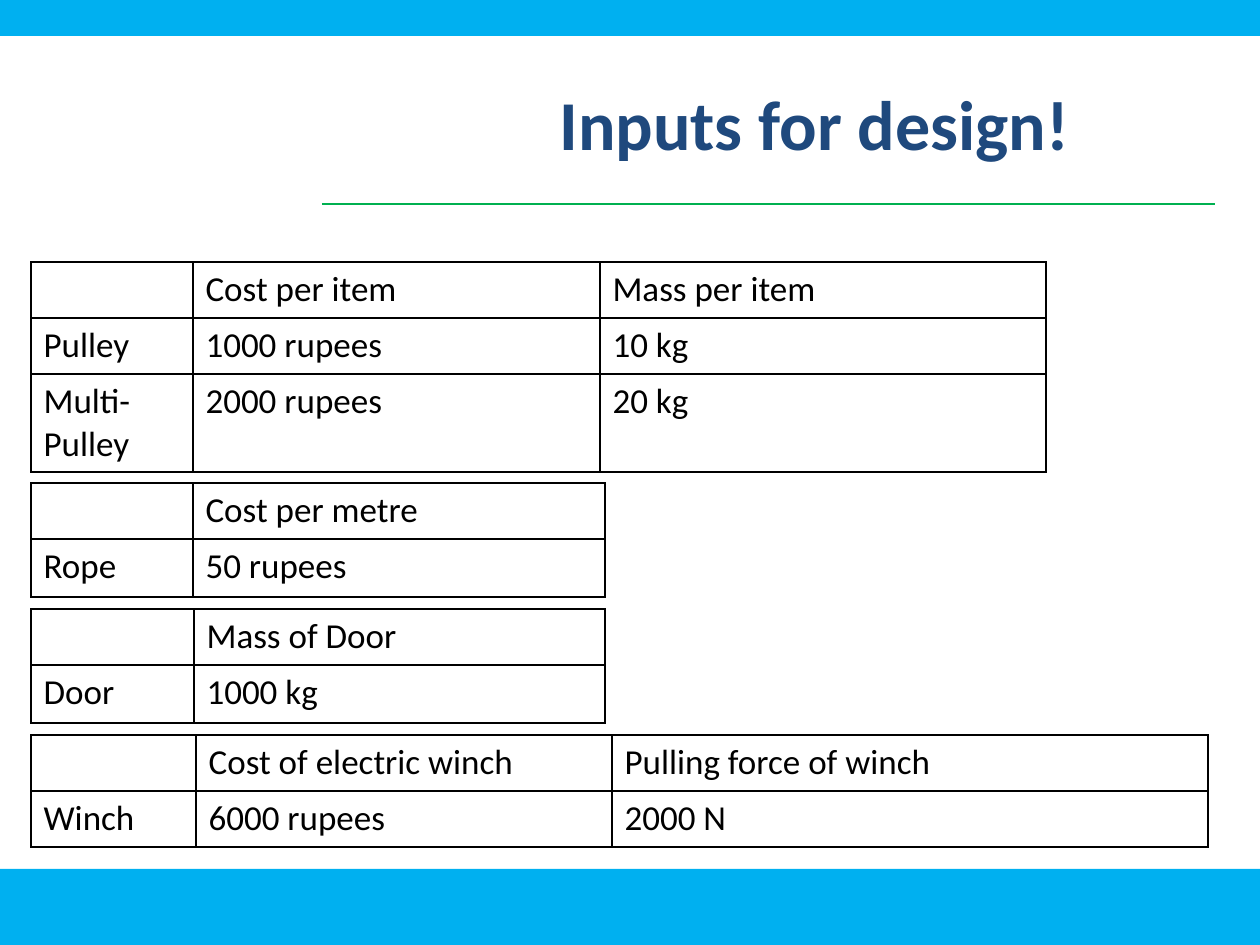
from dataclasses import dataclass

from lxml import etree
from pptx import Presentation
from pptx.dml.color import RGBColor
from pptx.enum.shapes import MSO_CONNECTOR, MSO_SHAPE
from pptx.enum.text import MSO_ANCHOR, PP_ALIGN
from pptx.oxml.ns import qn
from pptx.util import Emu, Pt

RECT = MSO_SHAPE.RECTANGLE
STRAIGHT = MSO_CONNECTOR.STRAIGHT
MIDDLE = MSO_ANCHOR.MIDDLE
CENTER = PP_ALIGN.CENTER

PX_PER_INCH = 126
WIDTH, HEIGHT = 1260, 945


@dataclass(frozen=True)
class Theme:
    font: str = "Calibri"
    title_size: int = 40
    body_size: int = 20
    rule_width: float = 0.75
    border_width: int = 1
    band: str = "00B0F0"
    rule: str = "00B050"
    title: str = "1F497D"
    text: str = "000000"


@dataclass(frozen=True)
class DataTable:
    top: int
    columns: list[int]
    row_heights: list[int]
    rows: list[list[str]]


THEME = Theme()
TABLE_LEFT = 31
TABLES = [
    DataTable(262, [162, 407, 446], [56, 56, 98], [
        ["", "Cost per item", "Mass per item"],
        ["Pulley", "1000 rupees", "10 kg"],
        ["Multi-Pulley", "2000 rupees", "20 kg"],
    ]),
    DataTable(483, [162, 412], [56, 58], [
        ["", "Cost per metre"],
        ["Rope", "50 rupees"],
    ]),
    DataTable(609, [163, 411], [56, 58], [
        ["", "Mass of Door"],
        ["Door", "1000 kg"],
    ]),
    DataTable(735, [165, 416, 596], [56, 56], [
        ["", "Cost of electric winch", "Pulling force of winch"],
        ["Winch", "6000 rupees", "2000 N"],
    ]),
]


def px(n: int) -> Emu:
    return Emu(round(n * 914400 / PX_PER_INCH))


def rgb(value: str) -> RGBColor:
    return RGBColor.from_string(value)


def style_text(p, size: int, color: str, bold: bool = False) -> None:
    for r in p.runs:
        r.font.name = THEME.font
        r.font.size = Pt(size)
        r.font.bold = bold
        r.font.color.rgb = rgb(color)


def add_band(s, top: int, height: int) -> None:
    sp = s.shapes.add_shape(RECT, 0, px(top), px(WIDTH), px(height))
    sp.shadow.inherit = False
    sp.fill.solid()
    sp.fill.fore_color.rgb = rgb(THEME.band)
    sp.line.fill.background()


def add_rule(s, left: int, right: int, y: int) -> None:
    line = s.shapes.add_connector(STRAIGHT, px(left), px(y), px(right), px(y))
    line.line.color.rgb = rgb(THEME.rule)
    line.line.width = Pt(THEME.rule_width)
    etree.SubElement(line._element.spPr, qn("a:effectLst"))


def add_title(s, text: str) -> None:
    tf = s.shapes.add_textbox(px(410), px(63), px(809), px(118)).text_frame
    tf.word_wrap = True
    tf.vertical_anchor = MIDDLE
    tf.text = text
    p = tf.paragraphs[0]
    p.alignment = CENTER
    style_text(p, THEME.title_size, THEME.title, bold=True)


def set_borders(cell) -> None:
    """Add the four side lines, which must precede the cell's fill."""
    tc_pr = cell._tc.get_or_add_tcPr()
    for i, side in enumerate(("lnL", "lnR", "lnT", "lnB")):
        ln = etree.Element(qn(f"a:{side}"), w=str(Pt(THEME.border_width)))
        fill = etree.SubElement(ln, qn("a:solidFill"))
        etree.SubElement(fill, qn("a:srgbClr"), val=THEME.text)
        tc_pr.insert(i, ln)


def add_data_table(s, data: DataTable) -> None:
    table = s.shapes.add_table(
        len(data.rows), len(data.columns), px(TABLE_LEFT), px(data.top),
        px(sum(data.columns)), px(sum(data.row_heights))).table
    table.first_row = False
    table.horz_banding = False
    for column, width in zip(table.columns, data.columns):
        column.width = px(width)
    for row, height, texts in zip(table.rows, data.row_heights, data.rows):
        row.height = px(height)
        for cell, text in zip(row.cells, texts):
            cell.fill.background()
            set_borders(cell)
            cell.text_frame.text = text
            style_text(cell.text_frame.paragraphs[0], THEME.body_size, THEME.text)


def main() -> None:
    prs = Presentation()
    prs.slide_width, prs.slide_height = px(WIDTH), px(HEIGHT)
    s = prs.slides.add_slide(prs.slide_layouts[6])

    # Frame: bottom band, title rule, top band
    add_band(s, 869, 76)
    add_rule(s, 322, 1215, 204)
    add_band(s, 0, 36)

    # Title and input tables
    add_title(s, "Inputs for design!")
    for data in TABLES:
        add_data_table(s, data)

    prs.save("out.pptx")


if __name__ == "__main__":
    main()
